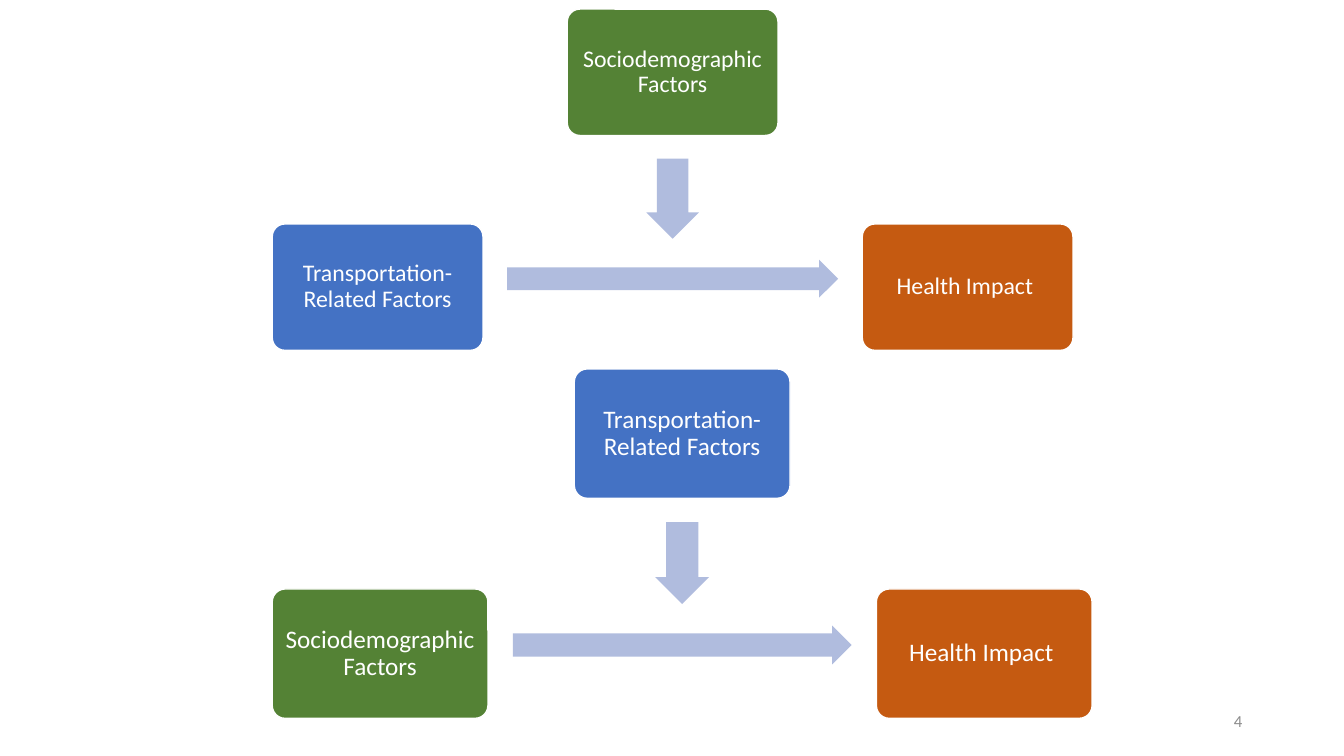
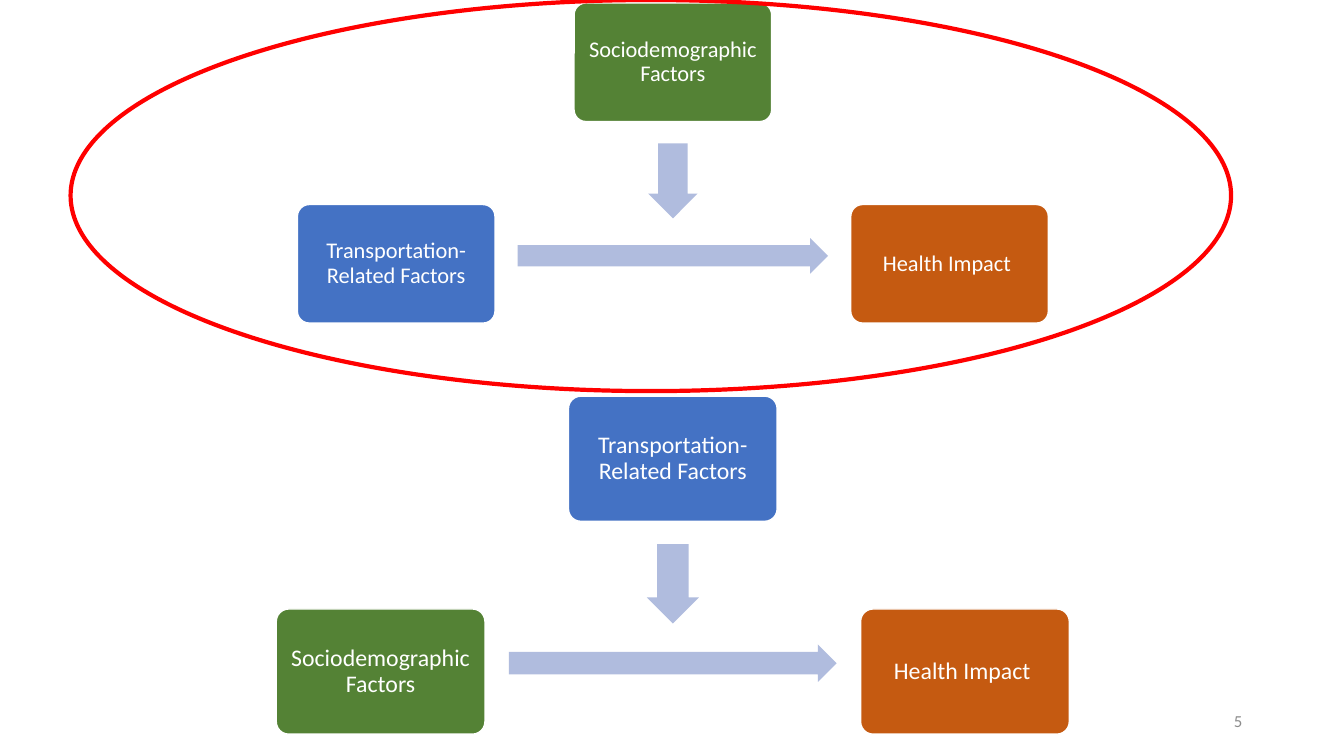
from dataclasses import dataclass

from pptx import Presentation
from pptx import util as u
from pptx.dml.color import RGBColor
from pptx.enum import shapes, text

COLORS = {
    "transport": "4472C4",
    "social": "548235",
    "health": "C55A11",
    "arrow": "B0BCDE",
    "white": "FFFFFF",
    "highlight": "FF0000",
    "number": "8C8C8C",
}
LABELS = {
    "transport": "Transportation-Related Factors",
    "social": "Sociodemographic Factors",
    "health": "Health Impact ",
}
FONT = "Calibri"
BOX_HEIGHT = 0.6
COLUMN_STEP = 1.4
ROW_STEP = 1.02
ACROSS_ARROW = (1.9, 1.28, 1.57, 0.18)
DOWN_ARROW = (1.9, 0.9, 0.38, 0.25)


@dataclass(frozen=True)
class Diagram:
    left: float
    top: float
    unit: float
    size: int
    cause: str
    moderator: str


@dataclass(frozen=True)
class Page:
    number: int
    diagrams: tuple[Diagram, ...]
    highlight: tuple[float, float, float, float] | None = None


PAGES = (
    Page(4, (
        Diagram(2.7, 0.09, 2.09, 17, "transport", "social"),
        Diagram(2.7, 3.66, 2.14, 18, "social", "transport"),
    )),
    Page(5, (
        Diagram(2.95, 0.03, 1.96, 16, "transport", "social"),
        Diagram(2.74, 3.93, 2.07, 17, "social", "transport"),
    ), (0.7, 0, 11.51, 3.88)),
)


def rgb(name: str) -> RGBColor:
    return RGBColor.from_string(COLORS[name])


def style_text(p, size: int, color: str, align) -> None:
    p.alignment = align
    for r in p.runs:
        r.font.name = FONT
        r.font.size = u.Pt(size)
        r.font.color.rgb = rgb(color)


def add_shape(parent, kind, left: float, top: float, width: float, height: float):
    sp = parent.shapes.add_shape(
        kind, u.Inches(left), u.Inches(top), u.Inches(width), u.Inches(height))
    sp.shadow.inherit = False
    return sp


def add_box(grp, d: Diagram, column: int, row: int, role: str) -> None:
    sp = add_shape(
        grp, shapes.MSO_SHAPE.ROUNDED_RECTANGLE,
        d.left + column * COLUMN_STEP * d.unit, d.top + row * ROW_STEP * d.unit,
        d.unit, BOX_HEIGHT * d.unit)
    sp.adjustments[0] = 0.1
    sp.fill.solid()
    sp.fill.fore_color.rgb = rgb(role)
    sp.line.color.rgb = rgb("white")
    sp.line.width = u.Pt(1)
    tf = sp.text_frame
    tf.text = LABELS[role]
    tf.word_wrap = True
    tf.vertical_anchor = text.MSO_ANCHOR.MIDDLE
    tf.margin_left = tf.margin_right = tf.margin_top = tf.margin_bottom = u.Inches(0.07)
    p = tf.paragraphs[0]
    p.line_spacing = 0.9
    style_text(p, d.size, "white", text.PP_ALIGN.CENTER)


def add_arrow(grp, d: Diagram, share: tuple[float, float, float, float], rotation: int = 0) -> None:
    x, y, width, height = (v * d.unit for v in share)
    sp = add_shape(
        grp, shapes.MSO_SHAPE.RIGHT_ARROW,
        d.left + x - width / 2, d.top + y - height / 2, width, height)
    sp.rotation = rotation
    sp.adjustments[0] = 0.6
    sp.adjustments[1] = 0.5
    sp.fill.solid()
    sp.fill.fore_color.rgb = rgb("arrow")
    sp.line.fill.background()


def add_diagram(s, d: Diagram) -> None:
    grp = s.shapes.add_group_shape()
    add_box(grp, d, 0, 1, d.cause)
    add_arrow(grp, d, ACROSS_ARROW)
    add_box(grp, d, 1, 0, d.moderator)
    add_arrow(grp, d, DOWN_ARROW, 90)
    add_box(grp, d, 2, 1, "health")


def add_highlight(s, bounds: tuple[float, float, float, float]) -> None:
    sp = add_shape(s, shapes.MSO_SHAPE.OVAL, *bounds)
    sp.fill.background()
    sp.line.color.rgb = rgb("highlight")
    sp.line.width = u.Pt(3)


def add_number(s, number: int) -> None:
    sp = s.shapes.add_textbox(u.Inches(9.42), u.Inches(6.95), u.Inches(3), u.Inches(0.4))
    tf = sp.text_frame
    tf.text = str(number)
    tf.word_wrap = True
    tf.vertical_anchor = text.MSO_ANCHOR.MIDDLE
    style_text(tf.paragraphs[0], 12, "number", text.PP_ALIGN.RIGHT)


def main() -> None:
    prs = Presentation()
    prs.slide_width, prs.slide_height = u.Inches(13.33), u.Inches(7.5)
    for page in PAGES:
        s = prs.slides.add_slide(prs.slide_layouts[6])
        for d in page.diagrams:
            add_diagram(s, d)
        if page.highlight:
            add_highlight(s, page.highlight)
        add_number(s, page.number)
    prs.save("out.pptx")


if __name__ == "__main__":
    main()
